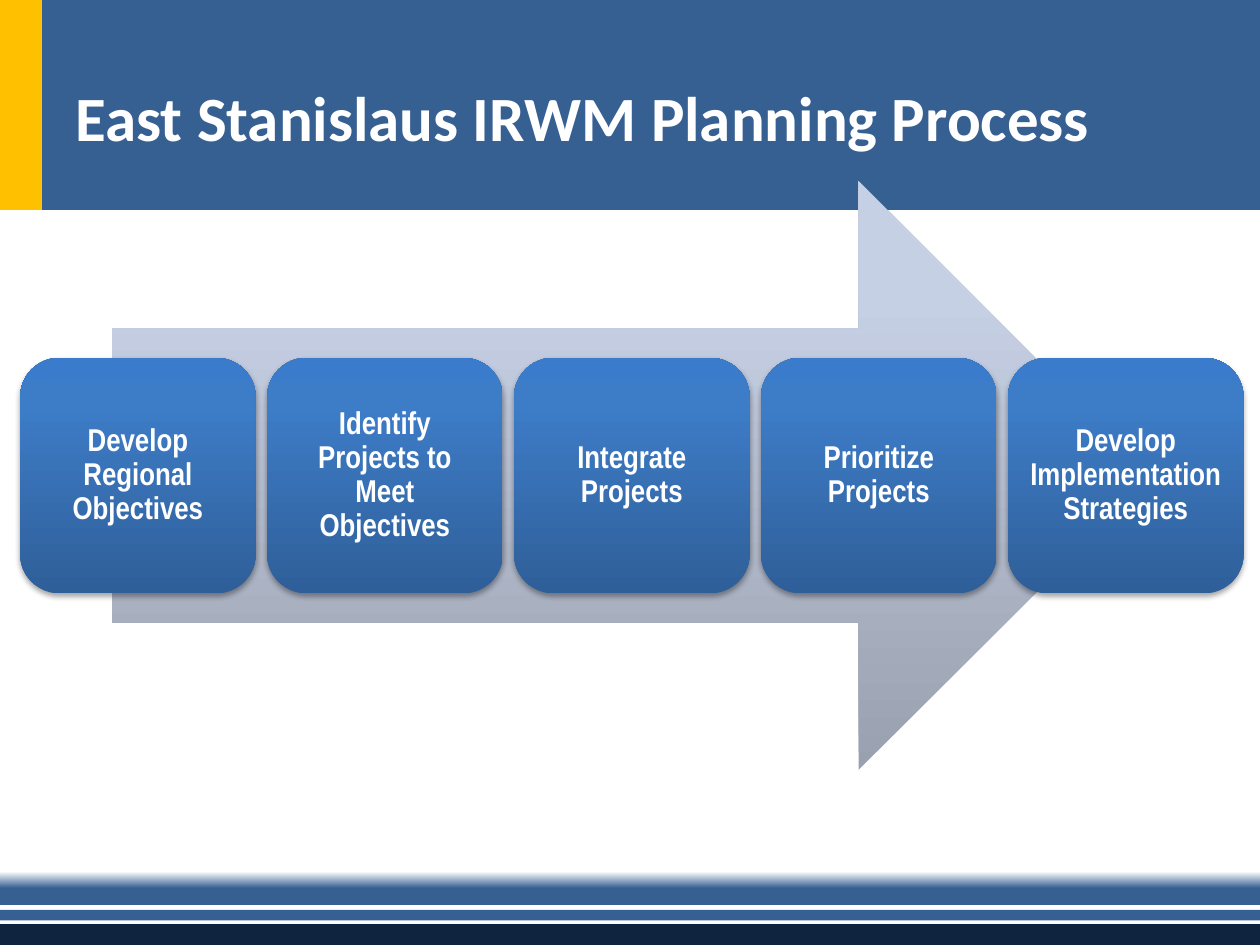
from lxml import etree
from pptx import Presentation, util as u
from pptx.dml.color import RGBColor
from pptx.enum import shapes, text
from pptx.oxml import parse_xml
from pptx.oxml.ns import nsdecls, qn

COLS, ROWS = 120, 90
INK = {"gold": "FFC000", "blue": "376092", "navy": "0F243E", "white": "FFFFFF", "black": "000000"}
FADE = [(0, INK["white"]), (50, INK["blue"])]
STEEL = [(0, "99A0AF"), (80, "C6D0E4"), (100, "C7D1E5")]
GLOSS = [(0, "2F5F99"), (80, "3D7CC7"), (100, "3A7CCB")]
STEPS = [
    "Develop Regional Objectives",
    "Identify Projects to Meet Objectives",
    "Integrate Projects",
    "Prioritize Projects",
    "Develop Implementation Strategies",
]


class Deck:
    """Holds the style and the current slide, placing elements on a grid of columns and rows."""

    def __init__(self):
        self.prs = Presentation()
        self.prs.slide_width, self.prs.slide_height = u.Inches(10), u.Inches(7.5)
        self.slide = self.prs.slides.add_slide(self.prs.slide_layouts[5])

    def span(self, x, y, w, h):
        wide, high = self.prs.slide_width / COLS, self.prs.slide_height / ROWS
        return [u.Emu(round(n)) for n in (x * wide, y * high, w * wide, h * high)]

    def form(self, kind, box):
        item = self.slide.shapes.add_shape(kind, *self.span(*box))
        item.shadow.inherit = False
        item.line.fill.background()
        return item

    def band(self, box, ink):
        item = self.form(shapes.MSO_SHAPE.RECTANGLE, box)
        item.fill.solid()
        item.fill.fore_color.rgb = RGBColor.from_string(INK[ink])

    def blend(self, kind, box, stops, turn):
        item = self.form(kind, box)
        item.fill.gradient()
        marks = "".join(
            f'<a:gs pos="{pos * 1000}"><a:srgbClr val="{ink}"/></a:gs>' for pos, ink in stops
        )
        props = item._element.spPr
        props.replace(props.find(qn("a:gradFill")), parse_xml(
            f'<a:gradFill {nsdecls("a")} rotWithShape="1"><a:gsLst>{marks}</a:gsLst>'
            f'<a:lin ang="{turn * 60000}" scaled="0"/></a:gradFill>'))
        return item

    def shade(self, item):
        glow = etree.SubElement(
            item._element.spPr.find(qn("a:effectLst")), qn("a:outerShdw"),
            blurRad=str(u.Pt(3.1)), dist=str(u.Pt(1.8)), dir="5400000", rotWithShape="0")
        ink = etree.SubElement(glow, qn("a:srgbClr"), val=INK["black"])
        etree.SubElement(ink, qn("a:alpha"), val="35000")

    def label(self, item, words, face, size, align):
        frame = item.text_frame
        frame.text = words
        frame.word_wrap = True
        frame.auto_size = text.MSO_AUTO_SIZE.NONE
        frame.vertical_anchor = text.MSO_ANCHOR.MIDDLE
        para = frame.paragraphs[0]
        para.alignment = align
        font = para.runs[0].font
        font.name, font.size, font.bold = face, u.Pt(size), True
        font.color.rgb = RGBColor.from_string(INK["white"])
        return frame

    def title(self, box, words):
        item = self.slide.shapes.title
        item.left, item.top, item.width, item.height = self.span(*box)
        self.label(item, words, "Calibri", 36, text.PP_ALIGN.LEFT)
        self.slide.shapes._spTree.append(item._element)

    def card(self, box, words):
        item = self.blend(shapes.MSO_SHAPE.ROUNDED_RECTANGLE, box, GLOSS, 270)
        self.shade(item)
        frame = self.label(item, words, "Arial Narrow", 18, text.PP_ALIGN.CENTER)
        frame.margin_left = frame.margin_right = u.Inches(0.07)
        frame.margin_top = frame.margin_bottom = u.Inches(0.07)
        frame.paragraphs[0].line_spacing = 0.9


def main():
    deck = Deck()
    deck.band((0, 0, 4, 20), "gold")
    deck.band((4, 0, COLS - 4, 20), "blue")
    deck.band((0, 88, COLS, 2), "navy")
    deck.band((0, 86.67, COLS, 1), "blue")
    deck.blend(shapes.MSO_SHAPE.RECTANGLE, (0, 83, COLS, 3.17), FADE, 90)
    deck.title((6, 3.6, 108, 15), "East Stanislaus IRWM Planning Process")
    deck.blend(shapes.MSO_SHAPE.RIGHT_ARROW, (10.68, 17.28, 99.12, 56.04), STEEL, 270)
    side, pitch = 22.44, 23.52
    for col, words in enumerate(STEPS):
        deck.card((1.92 + col * pitch, 34.08, side, side), words)
    deck.prs.save("out.pptx")


if __name__ == "__main__":
    main()
